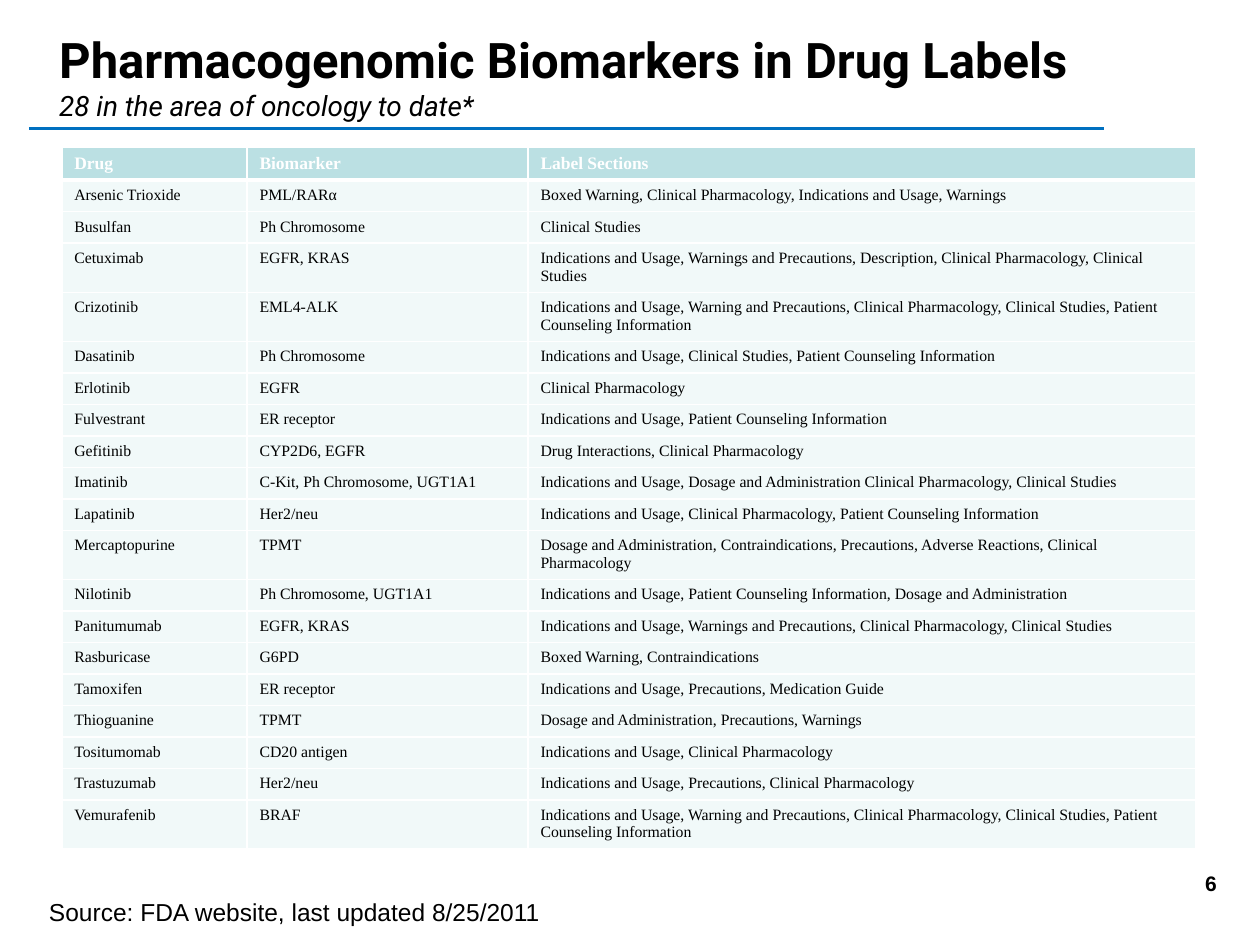
"""Build the slide on pharmacogenomic biomarkers in oncology drug labels."""
from lxml.etree import SubElement
from pptx import Presentation
from pptx.dml.color import RGBColor
from pptx.enum.shapes import MSO_CONNECTOR
from pptx.enum.text import MSO_ANCHOR, PP_ALIGN
from pptx.oxml import parse_xml
from pptx.oxml.ns import nsdecls, qn
from pptx.util import Inches, Pt

BLACK = RGBColor(0x00, 0x00, 0x00)
WHITE = RGBColor(0xFF, 0xFF, 0xFF)
BLUE = RGBColor(0x00, 0x70, 0xC0)
TEAL = RGBColor(0xBB, 0xE0, 0xE3)
PALE = RGBColor(0xF1, 0xF9, 0xF9)

TITLE = "Pharmacogenomic Biomarkers in Drug Labels"
SUBTITLE = "28 in the area of oncology to date*"
SOURCE = "Source: FDA website, last updated 8/25/2011"
PAGE_NUMBER = "6"
HEADER = ("Drug", "Biomarker", "Label Sections")
DRUGS = [
    ("Arsenic Trioxide", "PML/RARα",
     "Boxed Warning, Clinical Pharmacology, Indications and Usage, Warnings"),
    ("Busulfan", "Ph Chromosome", "Clinical Studies"),
    ("Cetuximab", "EGFR, KRAS",
     "Indications and Usage, Warnings and Precautions, Description, "
     "Clinical Pharmacology, Clinical Studies"),
    ("Crizotinib", "EML4-ALK",
     "Indications and Usage, Warning and Precautions, Clinical Pharmacology, "
     "Clinical Studies, Patient Counseling Information"),
    ("Dasatinib", "Ph Chromosome",
     "Indications and Usage, Clinical Studies, Patient Counseling Information"),
    ("Erlotinib", "EGFR", "Clinical Pharmacology"),
    ("Fulvestrant", "ER receptor",
     "Indications and Usage, Patient Counseling Information"),
    ("Gefitinib", "CYP2D6, EGFR", "Drug Interactions, Clinical Pharmacology"),
    ("Imatinib", "C-Kit, Ph Chromosome, UGT1A1",
     "Indications and Usage, Dosage and Administration Clinical Pharmacology, "
     "Clinical Studies"),
    ("Lapatinib", "Her2/neu",
     "Indications and Usage, Clinical Pharmacology, Patient Counseling Information"),
    ("Mercaptopurine", "TPMT",
     "Dosage and Administration, Contraindications, Precautions, "
     "Adverse Reactions, Clinical Pharmacology"),
    ("Nilotinib", "Ph Chromosome, UGT1A1",
     "Indications and Usage, Patient Counseling Information, "
     "Dosage and Administration"),
    ("Panitumumab", "EGFR, KRAS",
     "Indications and Usage, Warnings and Precautions, Clinical Pharmacology, "
     "Clinical Studies"),
    ("Rasburicase", "G6PD", "Boxed Warning, Contraindications"),
    ("Tamoxifen", "ER receptor",
     "Indications and Usage, Precautions, Medication Guide"),
    ("Thioguanine", "TPMT", "Dosage and Administration, Precautions, Warnings"),
    ("Tositumomab", "CD20 antigen", "Indications and Usage, Clinical Pharmacology"),
    ("Trastuzumab", "Her2/neu",
     "Indications and Usage, Precautions, Clinical Pharmacology"),
    ("Vemurafenib", "BRAF",
     "Indications and Usage, Warning and Precautions, Clinical Pharmacology, "
     "Clinical Studies, Patient Counseling Information"),
]
COLUMN_WIDTHS = (1.47, 2.23, 5.3)
HEADER_HEIGHT, ROW_HEIGHT, TALL_ROW_HEIGHT = 0.26, 0.25, 0.39
LINE_CHARACTERS = 95


def add_text(para, text, font="Arial", size=14, color=BLACK, bold=False, italic=False):
    span = para.add_run()
    span.text = text
    span.font.name, span.font.size = font, Pt(size)
    span.font.bold, span.font.italic = bold, italic
    span.font.color.rgb = color


def set_borders(cell, top, bottom):
    properties = cell._tc.get_or_add_tcPr()
    edges = (("L", 1), ("R", 1), ("T", top), ("B", bottom))
    for position, (side, width) in enumerate(edges):
        properties.insert(position, parse_xml(
            f'<a:ln{side} {nsdecls("a")} w="{Pt(width)}"><a:solidFill>'
            f'<a:srgbClr val="{WHITE}"/></a:solidFill></a:ln{side}>'))


def add_title(page):
    title = page.shapes.title
    title.left, title.top = Inches(0.37), Inches(0.16)
    title.width, title.height = Inches(9.17), Inches(0.88)
    title.text_frame.vertical_anchor = MSO_ANCHOR.MIDDLE
    para = title.text_frame.paragraphs[0]
    para.alignment = PP_ALIGN.LEFT
    add_text(para, TITLE, font="Roboto", size=28, bold=True)
    para.add_line_break()
    add_text(para, SUBTITLE, font="Roboto", size=16, italic=True)


def add_rule(page):
    rule = page.shapes.add_connector(
        MSO_CONNECTOR.STRAIGHT, Inches(0.23), Inches(1.02), Inches(8.76), Inches(1.02))
    rule.line.color.rgb = BLUE
    rule.line.width = Pt(2.25)
    SubElement(rule._element.spPr, qn("a:effectLst"))


def add_drug_table(page):
    rows = [HEADER, *DRUGS]
    heights = [HEADER_HEIGHT] + [
        TALL_ROW_HEIGHT if len(sections) > LINE_CHARACTERS else ROW_HEIGHT
        for _, _, sections in DRUGS]
    table = page.shapes.add_table(
        len(rows), len(HEADER), Inches(0.49), Inches(1.17),
        Inches(sum(COLUMN_WIDTHS)), Inches(sum(heights))).table
    for column, width in zip(table.columns, COLUMN_WIDTHS):
        column.width = Inches(width)
    for index, (values, height) in enumerate(zip(rows, heights)):
        table.rows[index].height = Inches(height)
        is_header = index == 0
        for cell, value in zip(table.rows[index].cells, values):
            cell.fill.solid()
            cell.fill.fore_color.rgb = TEAL if is_header else PALE
            set_borders(cell, top=3 if index == 1 else 1, bottom=3 if is_header else 1)
            add_text(cell.text_frame.paragraphs[0], value, font="Times New Roman",
                     size=10 if is_header else 9,
                     color=WHITE if is_header else BLACK, bold=is_header)


def add_label(page, text, left, top, width, height, wrap=True,
              align=PP_ALIGN.LEFT, **style):
    box = page.shapes.add_textbox(*map(Inches, (left, top, width, height)))
    box.text_frame.word_wrap = wrap
    para = box.text_frame.paragraphs[0]
    para.alignment = align
    add_text(para, text, **style)


def main():
    deck = Presentation()
    deck.slide_width, deck.slide_height = Inches(10), Inches(7.5)
    page = deck.slides.add_slide(deck.slide_layouts[5])
    add_rule(page)
    add_title(page)
    add_drug_table(page)
    add_label(page, SOURCE, 0.29, 7.07, 4.12, 0.34, wrap=False)
    add_label(page, PAGE_NUMBER, 9.37, 6.86, 0.48, 0.5, align=PP_ALIGN.CENTER,
              size=12, bold=True)
    deck.save("out.pptx")


if __name__ == "__main__":
    main()
